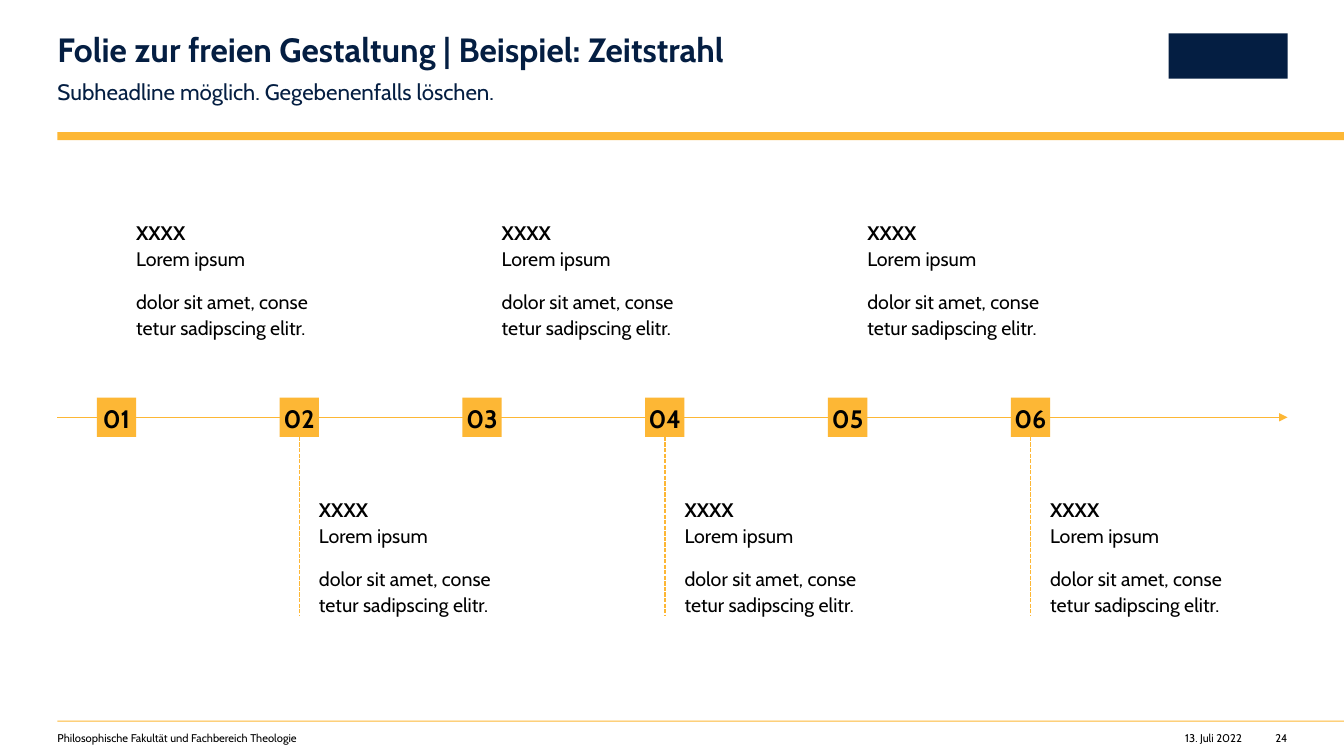
import pptx
import pptx.util
import pptx.oxml
import pptx.dml.color
import pptx.enum.dml
import pptx.enum.shapes
import pptx.enum.text

# Content
HEAD = "Folie zur freien Gestaltung | Beispiel: Zeitstrahl"
SUB = "Subheadline möglich. Gegebenenfalls löschen."
YEAR, LABEL = "XXXX", "Lorem ipsum"
BODY = "dolor sit amet, conse\vtetur sadipscing elitr."
STEPS = [(f"{n:02}", YEAR, LABEL, BODY) for n in range(1, 7)]
FEET = [  # text, left, width, right-aligned
    ("Philosophische Fakultät und Fachbereich Theologie", 0.57, 5.98, False),
    ("13. Juli 2022", 11.58, 0.74, True),
    ("24", 12.63, 0.14, True),
]
COLORS = {"navy": "041E42", "gold": "FDB735", "black": "000000"}
FONT = "Cabin"

# Grid in inches
WIDE, HIGH = 13.33, 7.5
LEFT, RIGHT = 0.57, 12.77
AXIS = 4.14
BOX = 0.39
FIRST, PITCH = 0.96, 1.813
ROWS = (2.17, 4.92)
STEM = 1.77

inch = pptx.util.Inches
ALIGN = pptx.enum.text.PP_ALIGN
SHAPE = pptx.enum.shapes.MSO_SHAPE


def color(name):
    return pptx.dml.color.RGBColor.from_string(COLORS[name])


def style(para, size, tone="black", bold=False, align=ALIGN.LEFT, lead=1.0, after=0):
    font = para.font
    font.name, font.size, font.bold = FONT, pptx.util.Pt(size), bold
    font.color.rgb = color(tone)
    para.alignment, para.line_spacing = align, lead
    para.space_before, para.space_after = 0, pptx.util.Pt(after)


def clear(frame, wrap=True, anchor=pptx.enum.text.MSO_ANCHOR.TOP):
    frame.margin_left = frame.margin_right = 0
    frame.margin_top = frame.margin_bottom = 0
    frame.word_wrap, frame.vertical_anchor = wrap, anchor
    return frame


def text(x, y, w, h, wrap=True):
    box = slide.shapes.add_textbox(inch(x), inch(y), inch(w), inch(h))
    return clear(box.text_frame, wrap)


def rect(x, y, w, h, tone):
    shape = slide.shapes.add_shape(SHAPE.RECTANGLE, inch(x), inch(y), inch(w), inch(h))
    shape.shadow.inherit = False
    shape.fill.solid()
    shape.fill.fore_color.rgb = color(tone)
    shape.line.fill.background()
    return shape


def line(x1, y1, x2, y2):
    link = slide.shapes.add_connector(
        pptx.enum.shapes.MSO_CONNECTOR.STRAIGHT, inch(x1), inch(y1), inch(x2), inch(y2))
    link.line.color.rgb = color("gold")
    link.line.width = pptx.util.Pt(1)
    pptx.oxml.xmlchemy.OxmlElement  # element factory used below
    link._element.spPr.append(pptx.oxml.xmlchemy.OxmlElement("a:effectLst"))
    return link


deck = pptx.Presentation()
deck.slide_width, deck.slide_height = inch(WIDE), inch(HIGH)
slide = deck.slides.add_slide(deck.slide_layouts[5])

# Header
rect(LEFT, 1.31, WIDE - LEFT, 0.08, "gold")
rect(11.59, 0.33, 1.18, 0.45, "navy")
title = slide.shapes.title
title.left, title.top, title.width, title.height = map(inch, (LEFT, 0.33, 7.49, 0.36))
clear(title.text_frame).text = HEAD
style(title.text_frame.paragraphs[0], 24, "navy", True, lead=0.9)
frame = text(LEFT, 0.75, 7.49, 0.27)
frame.text = SUB
style(frame.paragraphs[0], 16, "navy", lead=1.1)

# Footer
rect(LEFT, 7.15, WIDE - LEFT, 0.01, "gold")
for words, x, w, right in FEET:
    frame = text(x, 7.26, w, 0.13, not right)
    frame.text = words
    style(frame.paragraphs[0], 8, align=ALIGN.RIGHT if right else ALIGN.LEFT)

# Time axis
axis = line(LEFT, AXIS, RIGHT, AXIS)
tip = pptx.oxml.xmlchemy.OxmlElement("a:tailEnd")
tip.set("type", "triangle")
axis.line._get_or_add_ln().append(tip)

# Steps, in turn above and below the axis
for i, (num, year, label, body) in enumerate(STEPS):
    x = FIRST + i * PITCH
    mark = rect(x, AXIS - BOX / 2, BOX, BOX, "gold")
    frame = clear(mark.text_frame, anchor=pptx.enum.text.MSO_ANCHOR.MIDDLE)
    frame.text = num
    style(frame.paragraphs[0], 18, bold=True, align=ALIGN.CENTER, lead=1.1, after=12)

    frame = text(x + BOX, ROWS[i % 2], 1.95, 1.18)
    top = frame.paragraphs[0]
    lead = top.add_run()
    lead.text, lead.font.bold = year, True
    top.add_line_break()
    top.add_run().text = label
    rest = frame.add_paragraph()
    rest.text = body
    for para in (top, rest):
        style(para, 14, lead=1.1, after=12)

    if i % 2:
        mid, base = x + BOX / 2, AXIS + BOX / 2
        stem = line(mid, base, mid, base + STEM)
        stem.line.dash_style = pptx.enum.dml.MSO_LINE.SQUARE_DOT

deck.save("out.pptx")
